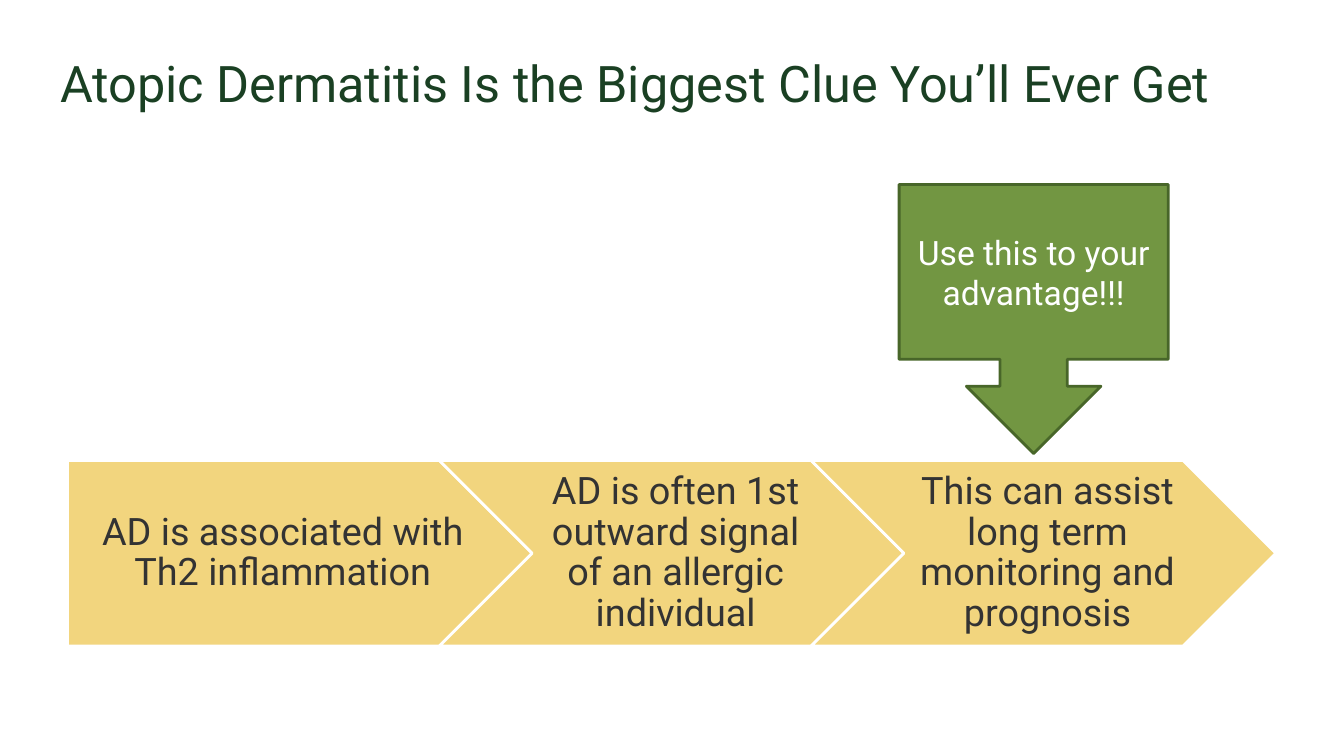
from dataclasses import dataclass

from pptx import Presentation
from pptx.dml.color import RGBColor
from pptx.enum import shapes, text
from pptx.util import Pt

FONT = "Roboto"
STEP_LEFT, STEP_TOP = 48.24, 329
STEP_WIDTH, STEP_HEIGHT = 332, 132.5
STEP_PITCH = STEP_WIDTH * 0.8
POINT_DEPTH = STEP_HEIGHT / 2


@dataclass
class Frame:
    left: float
    top: float
    width: float
    height: float

    def lengths(self) -> tuple:
        return Pt(self.left), Pt(self.top), Pt(self.width), Pt(self.height)


@dataclass
class Step:
    preset: shapes.MSO_SHAPE
    wording: str
    label_shift: float
    label_width: float
    left_inset: float


STEPS = [
    Step(shapes.MSO_SHAPE.PENTAGON, "AD is associated with Th2 inflammation",
         0, STEP_WIDTH - POINT_DEPTH / 2, 11.5),
    Step(shapes.MSO_SHAPE.CHEVRON, "AD is often 1st outward signal of an allergic individual",
         POINT_DEPTH, STEP_WIDTH - 2 * POINT_DEPTH, 8.5),
    Step(shapes.MSO_SHAPE.CHEVRON, "This can assist long term monitoring and prognosis",
         POINT_DEPTH, STEP_WIDTH - 2 * POINT_DEPTH, 8.5),
]


def color(value: str) -> RGBColor:
    return RGBColor.from_string(value)


def add_block(page, preset: shapes.MSO_SHAPE, frame: Frame, fill: str, line: str):
    block = page.shapes.add_shape(preset, *frame.lengths())
    block.shadow.inherit = False
    block.fill.solid()
    block.fill.fore_color.rgb = color(fill)
    block.line.color.rgb = color(line)
    block.line.width = Pt(2)
    return block


def write(box, wording: str, size: float, ink: str, spacing: float = 1.0) -> None:
    body = box.text_frame
    body.word_wrap = True
    body.vertical_anchor = text.MSO_ANCHOR.MIDDLE
    para = body.paragraphs[0]
    para.alignment = text.PP_ALIGN.CENTER
    para.line_spacing = spacing
    span = para.add_run()
    span.text = wording
    span.font.name = FONT
    span.font.size = Pt(size)
    span.font.color.rgb = color(ink)


def add_label(page, frame: Frame, wording: str, size: float, ink: str):
    box = page.shapes.add_textbox(*frame.lengths())
    write(box, wording, size, ink, 0.9)
    return box


def add_step(page, index: int, step: Step) -> None:
    left = STEP_LEFT + index * STEP_PITCH
    add_block(page, step.preset, Frame(left, STEP_TOP, STEP_WIDTH, STEP_HEIGHT),
              "F2D57E", "FFFFFF")
    label_frame = Frame(left + step.label_shift, STEP_TOP, step.label_width, STEP_HEIGHT)
    body = add_label(page, label_frame, step.wording, 27, "333333").text_frame
    body.margin_left, body.margin_right = Pt(step.left_inset), Pt(2.9)
    body.margin_top = body.margin_bottom = Pt(5.8)


def main() -> None:
    deck = Presentation()
    deck.slide_width, deck.slide_height = Pt(960), Pt(540)
    page = deck.slides.add_slide(deck.slide_layouts[6])
    add_label(page, Frame(21.6, 23, 864, 77.8),
              "Atopic Dermatitis Is the Biggest Clue You’ll Ever Get", 36, "1A4023")
    for index, step in enumerate(STEPS):
        add_step(page, index, step)
    callout = add_block(page, shapes.MSO_SHAPE.DOWN_ARROW_CALLOUT,
                        Frame(642.24, 131.76, 192.24, 192.24), "729642", "486629")
    write(callout, "Use this to your advantage!!!", 24, "FFFFFF")
    deck.save("out.pptx")


if __name__ == "__main__":
    main()
